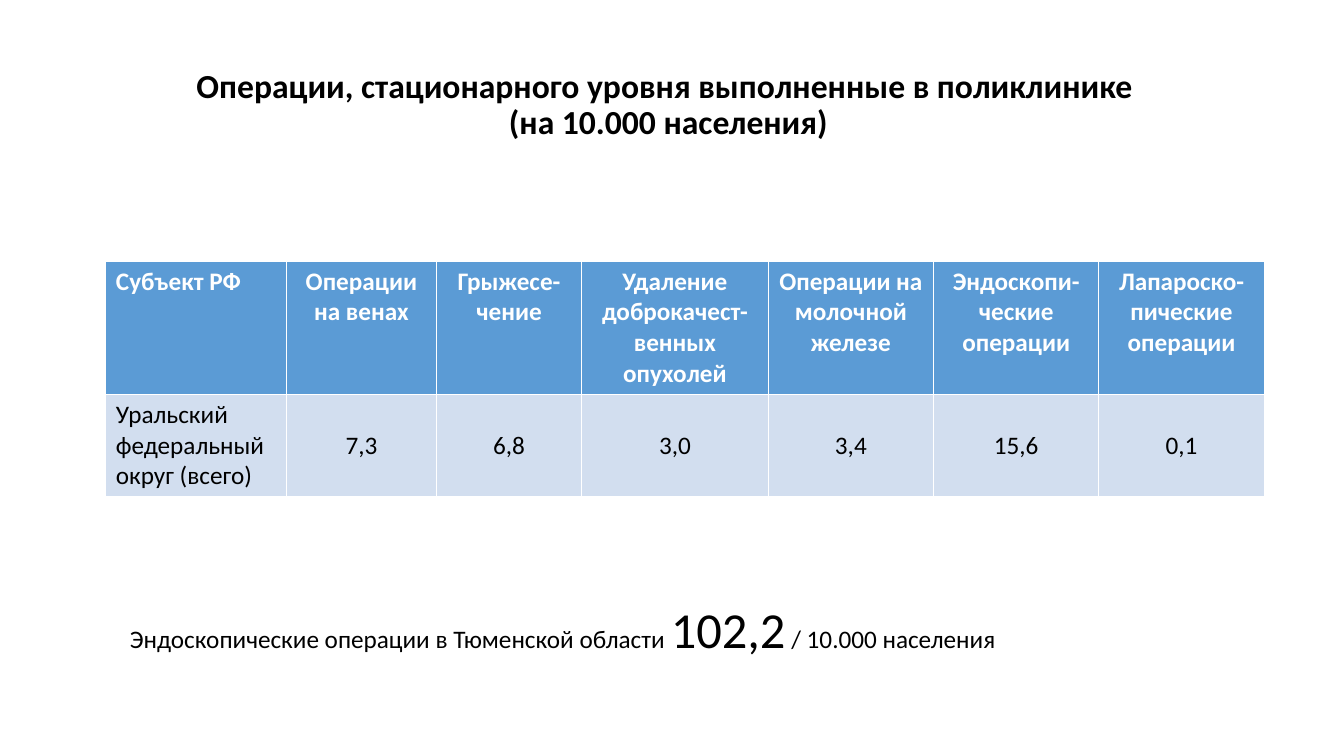
import pptx
import pptx.dml.color
import pptx.enum.text
import pptx.util

Inches = pptx.util.Inches
Pt = pptx.util.Pt
MIDDLE = pptx.enum.text.MSO_ANCHOR.MIDDLE
TOP = pptx.enum.text.MSO_ANCHOR.TOP
CENTER = pptx.enum.text.PP_ALIGN.CENTER
LEFT = pptx.enum.text.PP_ALIGN.LEFT

COLORS = {"text": "000000", "header_text": "FFFFFF",
          "header": "5B9BD5", "body": "D2DEEF"}

OPERATIONS = [
    # heading, rate per 10 000, column width
    ("Субъект РФ", "Уральский федеральный округ (всего)", 1.79),
    ("Операции на венах", "7,3", 1.49),
    ("Грыжесе-чение", "6,8", 1.44),
    ("Удаление доброкачест-венных опухолей", "3,0", 1.85),
    ("Операции на молочной железе", "3,4", 1.64),
    ("Эндоскопи-ческие операции", "15,6", 1.64),
    ("Лапароско-пические операции", "0,1", 1.64),
]
ROW_HEIGHTS = (1.3, 1.0)


def rgb(name):
    return pptx.dml.color.RGBColor.from_string(COLORS[name])


def style_font(paragraph, size, color="text", bold=False):
    font = paragraph.font
    font.name = "Calibri"
    font.size = Pt(size)
    font.bold = bold
    font.color.rgb = rgb(color)


def add_title(slide, left, top, width, height):
    title = slide.shapes.title
    title.left, title.top = Inches(left), Inches(top)
    title.width, title.height = Inches(width), Inches(height)
    frame = title.text_frame
    frame.word_wrap = True
    frame.vertical_anchor = MIDDLE
    heading = frame.paragraphs[0]
    heading.text = ("Операции, стационарного уровня выполненные в поликлинике \v"
                    "(на 10.000 населения)")
    heading.alignment = CENTER
    heading.line_spacing = 0.9
    style_font(heading, 24, bold=True)


def fill_cell(cell, text, is_header, is_label):
    cell.text = text
    cell.vertical_anchor = TOP if is_header or is_label else MIDDLE
    cell.fill.solid()
    cell.fill.fore_color.rgb = rgb("header" if is_header else "body")
    paragraph = cell.text_frame.paragraphs[0]
    paragraph.alignment = LEFT if is_label else CENTER
    style_font(paragraph, 18, "header_text" if is_header else "text", is_header)


def add_operations_table(slide, left, top, width):
    table = slide.shapes.add_table(
        len(ROW_HEIGHTS), len(OPERATIONS), Inches(left), Inches(top),
        Inches(width), Inches(sum(ROW_HEIGHTS))).table
    for row, height in zip(table.rows, ROW_HEIGHTS):
        row.height = Inches(height)
    for column, (heading, rate, column_width) in enumerate(OPERATIONS):
        table.columns[column].width = Inches(column_width)
        for row, text in enumerate((heading, rate)):
            fill_cell(table.cell(row, column), text, row == 0, column == 0)


def add_regional_rate(slide, left, top, width, height):
    box = slide.shapes.add_textbox(
        Inches(left), Inches(top), Inches(width), Inches(height))
    box.text_frame.word_wrap = True
    sentence = box.text_frame.paragraphs[0]
    style_font(sentence, 18)
    for text, size in (("Эндоскопические операции в Тюменской области ", 18),
                       ("102,2", 36),
                       (" / 10.000 населения", 18)):
        run = sentence.add_run()
        run.text = text
        run.font.size = Pt(size)


def main():
    deck = pptx.Presentation()
    deck.slide_width, deck.slide_height = Inches(13.33), Inches(7.5)
    slide = deck.slides.add_slide(deck.slide_layouts.get_by_name("Title Only"))
    add_title(slide, 0.88, 0.64, 11.5, 0.82)
    add_operations_table(slide, 1.05, 2.59, 11.5)
    add_regional_rate(slide, 1.19, 5.88, 11.35, 0.71)
    deck.save("out.pptx")


if __name__ == "__main__":
    main()
